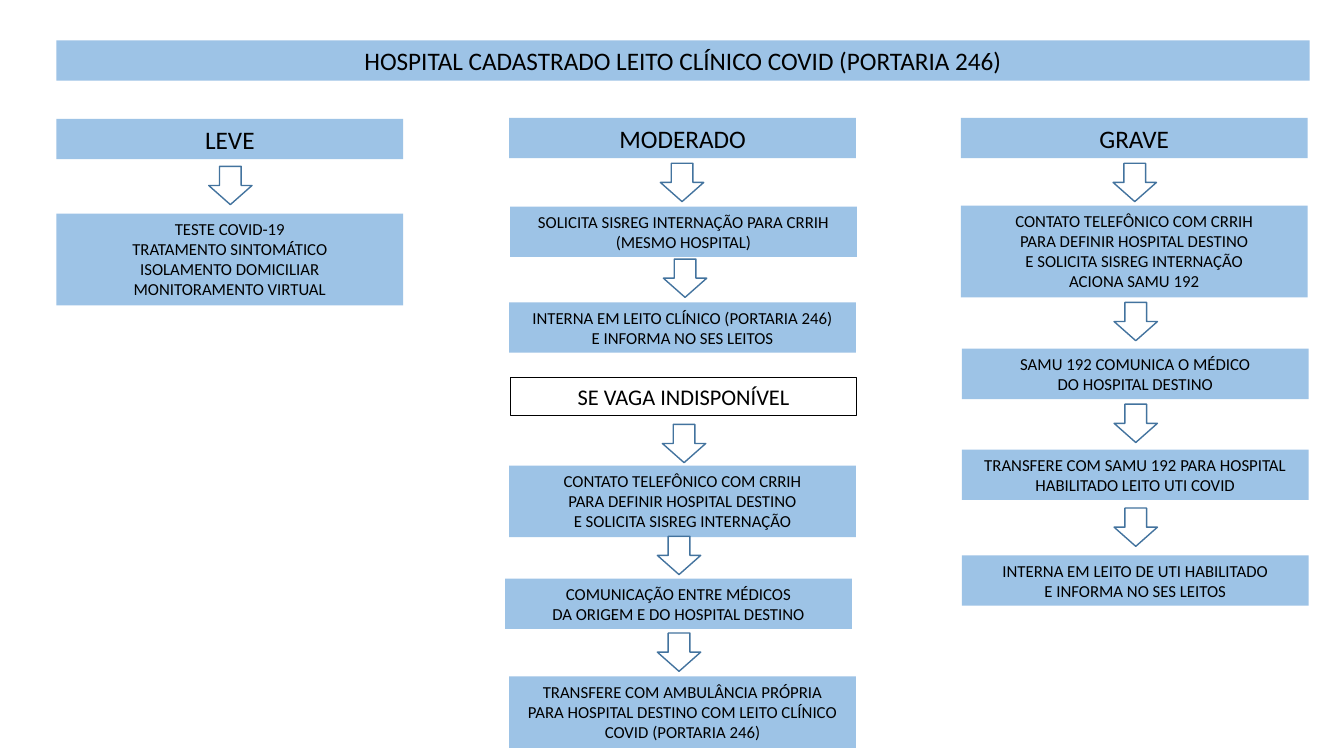
"""Build the care-flow slide for hospitals registered with clinical COVID beds."""
from dataclasses import dataclass

from pptx import Presentation
from pptx.dml.color import RGBColor
from pptx.enum.shapes import MSO_SHAPE
from pptx.enum.text import MSO_ANCHOR, MSO_AUTO_SIZE, PP_ALIGN
from pptx.util import Inches, Pt

BLUE = RGBColor(0x9D, 0xC3, 0xE6)
ARROW_BLUE = RGBColor(0x43, 0x73, 0x9E)
BLACK = RGBColor(0, 0, 0)

COL_W = 3.44
ARROW_W, ARROW_H = 0.43, 0.38
LEVE_X, MODERADO_X, GRAVE_X = 0.56, 5.05, 9.53

FRAME_FORMAT = {
    "word_wrap": True,
    "auto_size": MSO_AUTO_SIZE.SHAPE_TO_FIT_TEXT,
    "vertical_anchor": MSO_ANCHOR.TOP,
}


@dataclass
class Box:
    x: float
    y: float
    h: float
    lines: tuple[str, ...]
    size: int = 12
    w: float = COL_W
    outlined: bool = False


@dataclass
class Arrow:
    x: float
    y: float


BOXES = [
    Box(LEVE_X, 0.4, 0.4,
        ("HOSPITAL CADASTRADO LEITO CLÍNICO COVID (PORTARIA 246)",), 18, 12.43),
    Box(LEVE_X, 1.18, 0.4, ("LEVE",), 18),
    Box(LEVE_X, 2.12, 0.91,
        ("TESTE COVID-19", "TRATAMENTO SINTOMÁTICO",
         "ISOLAMENTO DOMICILIAR", "MONITORAMENTO VIRTUAL")),
    Box(MODERADO_X, 1.17, 0.4, ("MODERADO",), 18),
    Box(5.06, 2.05, 0.5,
        ("SOLICITA SISREG INTERNAÇÃO PARA CRRIH (MESMO HOSPITAL)",)),
    Box(MODERADO_X, 3, 0.5,
        ("INTERNA EM LEITO CLÍNICO (PORTARIA 246)", "E INFORMA NO SES LEITOS")),
    Box(5.06, 3.75, 0.37, ("SE VAGA INDISPONÍVEL",), 16, outlined=True),
    Box(MODERADO_X, 4.62, 0.71,
        ("CONTATO TELEFÔNICO COM CRRIH", "PARA DEFINIR HOSPITAL DESTINO",
         "E SOLICITA SISREG INTERNAÇÃO")),
    Box(5.01, 5.74, 0.5,
        ("COMUNICAÇÃO ENTRE MÉDICOS", "DA ORIGEM E DO HOSPITAL DESTINO")),
    Box(MODERADO_X, 6.71, 0.71,
        ("TRANSFERE COM AMBULÂNCIA PRÓPRIA",
         "PARA HOSPITAL DESTINO COM LEITO CLÍNICO COVID (PORTARIA 246)")),
    Box(GRAVE_X, 1.17, 0.4, ("GRAVE",), 18),
    Box(GRAVE_X, 2.04, 0.91,
        ("CONTATO TELEFÔNICO COM CRRIH", "PARA DEFINIR HOSPITAL DESTINO",
         "E SOLICITA SISREG INTERNAÇÃO", "ACIONA SAMU 192")),
    Box(9.54, 3.46, 0.5,
        ("SAMU 192 COMUNICA O MÉDICO", "DO HOSPITAL DESTINO")),
    Box(9.54, 4.46, 0.5,
        ("TRANSFERE COM SAMU 192 PARA HOSPITAL HABILITADO LEITO UTI COVID",)),
    Box(9.54, 5.51, 0.5,
        ("INTERNA EM LEITO DE UTI HABILITADO", "E INFORMA NO SES LEITOS")),
]

ARROWS = [
    Arrow(2.07, 1.65),
    Arrow(6.55, 1.62), Arrow(6.58, 2.57), Arrow(6.57, 4.21),
    Arrow(6.52, 5.32), Arrow(6.52, 6.28),
    Arrow(11.04, 1.62), Arrow(11.05, 3), Arrow(11.05, 4.01), Arrow(11.05, 5.04),
]


def add_outline(sp, color: RGBColor, width: float) -> None:
    """Leave the shape unfilled and give it a line."""
    sp.fill.background()
    sp.line.color.rgb = color
    sp.line.width = Pt(width)


def draw_box(s, box: Box) -> None:
    """Draw a rectangle with one centred paragraph per line of text."""
    sp = s.shapes.add_shape(MSO_SHAPE.RECTANGLE, Inches(box.x), Inches(box.y),
                            Inches(box.w), Inches(box.h))
    sp.shadow.inherit = False
    if box.outlined:
        add_outline(sp, BLACK, 0.75)
    else:
        sp.fill.solid()
        sp.fill.fore_color.rgb = BLUE
        sp.line.fill.background()
    tf = sp.text_frame
    for name, value in FRAME_FORMAT.items():
        setattr(tf, name, value)
    font_format = {"name": "Calibri", "size": Pt(box.size)}
    for i, line in enumerate(box.lines):
        p = tf.add_paragraph() if i else tf.paragraphs[0]
        p.alignment = PP_ALIGN.CENTER
        r = p.add_run()
        r.text = line
        r.font.color.rgb = BLACK
        for name, value in font_format.items():
            setattr(r.font, name, value)


def draw_arrow(s, arrow: Arrow) -> None:
    """Draw an outlined down arrow."""
    sp = s.shapes.add_shape(MSO_SHAPE.DOWN_ARROW, Inches(arrow.x), Inches(arrow.y),
                            Inches(ARROW_W), Inches(ARROW_H))
    sp.shadow.inherit = False
    add_outline(sp, ARROW_BLUE, 1)


def main() -> None:
    """Create and save the slide."""
    prs = Presentation()
    prs.slide_width, prs.slide_height = Inches(13.33), Inches(7.5)
    s = prs.slides.add_slide(prs.slide_layouts[6])
    for box in BOXES:
        draw_box(s, box)
    for arrow in ARROWS:
        draw_arrow(s, arrow)
    prs.save("out.pptx")


if __name__ == "__main__":
    main()
